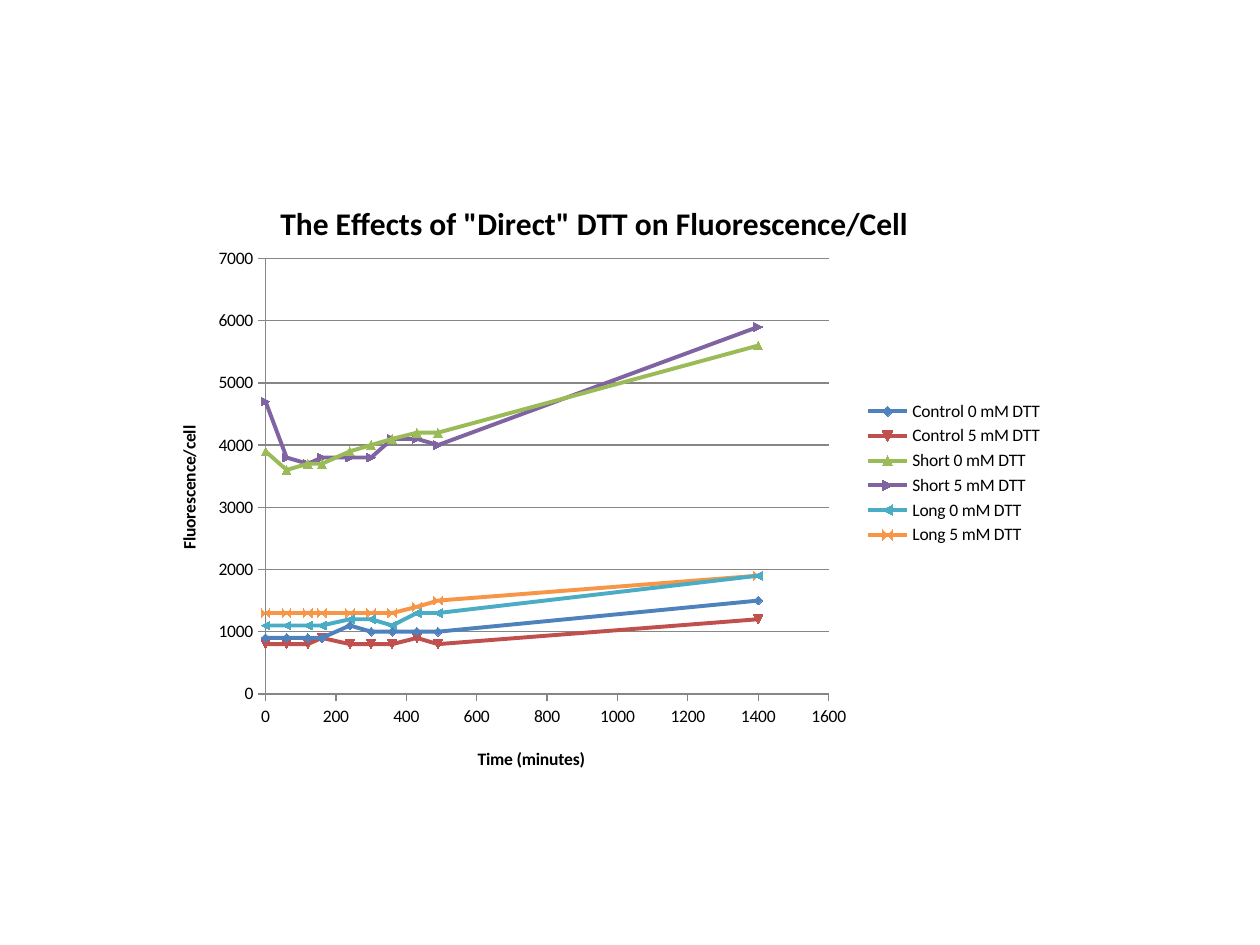
from lxml import etree
from pptx import Presentation
from pptx.chart.data import XyChartData
from pptx.dml.color import RGBColor
from pptx.enum.chart import XL_CHART_TYPE, XL_LEGEND_POSITION, XL_TICK_MARK
from pptx.util import Pt

PX = 9144  # 100 px to the inch
LINES = XL_CHART_TYPE.XY_SCATTER_LINES
RIGHT = XL_LEGEND_POSITION.RIGHT
OUT = XL_TICK_MARK.OUTSIDE
BLACK = RGBColor(0, 0, 0)
GREY = RGBColor(0x86, 0x86, 0x86)
BLUE = RGBColor(0x4F, 0x81, 0xBD)
RED = RGBColor(0xC0, 0x50, 0x4D)
GREEN = RGBColor(0x9B, 0xBB, 0x59)
PURPLE = RGBColor(0x80, 0x64, 0xA2)
TEAL = RGBColor(0x4B, 0xAC, 0xC6)
ORANGE = RGBColor(0xF7, 0x96, 0x46)
C = "{http://schemas.openxmlformats.org/drawingml/2006/chart}"

TIMES = [0, 60, 120, 160, 240, 300, 360, 430, 490, 1400]
SERIES = [
    ("Control 0 mM DTT", BLUE, [900, 900, 900, 900, 1100, 1000, 1000, 1000, 1000, 1500]),
    ("Control 5 mM DTT", RED, [800, 800, 800, 900, 800, 800, 800, 900, 800, 1200]),
    ("Short 0 mM DTT", GREEN, [3900, 3600, 3700, 3700, 3900, 4000, 4100, 4200, 4200, 5600]),
    ("Short 5 mM DTT", PURPLE, [4700, 3800, 3700, 3800, 3800, 3800, 4100, 4100, 4000, 5900]),
    ("Long 0 mM DTT", TEAL, [1100, 1100, 1100, 1100, 1200, 1200, 1100, 1300, 1300, 1900]),
    ("Long 5 mM DTT", ORANGE, [1300, 1300, 1300, 1300, 1300, 1300, 1300, 1400, 1500, 1900]),
]


def place(node, **vals):
    """Give a chart part a manual layout, in fractions of the chart."""
    lay = node.find(C + "layout")
    if lay is None:
        lay = etree.Element(C + "layout")
        text = node.find(C + "tx")
        node.insert(0 if text is None else node.index(text) + 1, lay)
    for old in list(lay):
        lay.remove(old)
    man = etree.SubElement(lay, C + "manualLayout")
    if "w" in vals:
        etree.SubElement(man, C + "layoutTarget").set("val", "inner")
    for key in ("x", "y"):
        etree.SubElement(man, C + key + "Mode").set("val", "edge")
    for key, val in vals.items():
        etree.SubElement(man, C + key).set("val", str(val))


def label(owner, text, size, x, y):
    """Title a chart or an axis at a set place."""
    owner.has_title = True
    title = owner.chart_title if owner is chart else owner.axis_title
    title.text_frame.text = text
    font = title.text_frame.paragraphs[0].runs[0].font
    for key, val in dict(name="Calibri", size=Pt(size), bold=True).items():
        setattr(font, key, val)
    font.color.rgb = BLACK
    place(title.format.element if hasattr(title.format, "element") else title.element, x=x, y=y)


prs = Presentation()
prs.slide_width, prs.slide_height = 1000 * PX, 750 * PX
slide = prs.slides.add_slide(prs.slide_layouts[6])

data = XyChartData(number_format="General")
for name, tint, vals in SERIES:
    row = data.add_series(name)
    for time, val in zip(TIMES, vals):
        row.add_data_point(time, val)
box = [n * PX for n in (117, 125, 721, 501)]
chart = slide.shapes.add_chart(LINES, *box, data).chart
chart.font.name, chart.font.size = "Calibri", Pt(10)
chart.font.color.rgb = BLACK

plot = chart.plots[0]
plot.vary_by_categories = False
for row, (name, tint, vals) in zip(plot.series, SERIES):
    row.smooth = False
    row.format.line.width = Pt(2.25)
    row.format.line.color.rgb = tint
    mark = row.marker.format
    mark.fill.solid()
    mark.fill.fore_color.rgb = tint
    mark.line.color.rgb = tint

xax, yax = chart.category_axis, chart.value_axis
for axis, top, step in ((xax, 1600, 200), (yax, 7000, 1000)):
    look = dict(minimum_scale=0, maximum_scale=top, major_unit=step,
                major_tick_mark=OUT, has_major_gridlines=axis is yax)
    for key, val in look.items():
        setattr(axis, key, val)
    axis.format.line.color.rgb = GREY
yax.major_gridlines.format.line.color.rgb = GREY

label(chart, 'The Effects of "Direct" DTT on Fluorescence/Cell', 18, 0.14, 0.06)
chart.chart_title.include_in_layout = True
label(xax, "Time (minutes)", 10, 0.36, 0.93)
label(yax, "Fluorescence/cell", 10, 0.03, 0.42)
chart.has_legend = True
chart.legend.position = RIGHT
chart.legend.include_in_layout = False
area = next(chart.element.iter(C + "plotArea")) if hasattr(chart, "element") else plot.element.getparent()
place(area, x=0.13, y=0.16, w=0.62, h=0.69)

prs.save("out.pptx")
